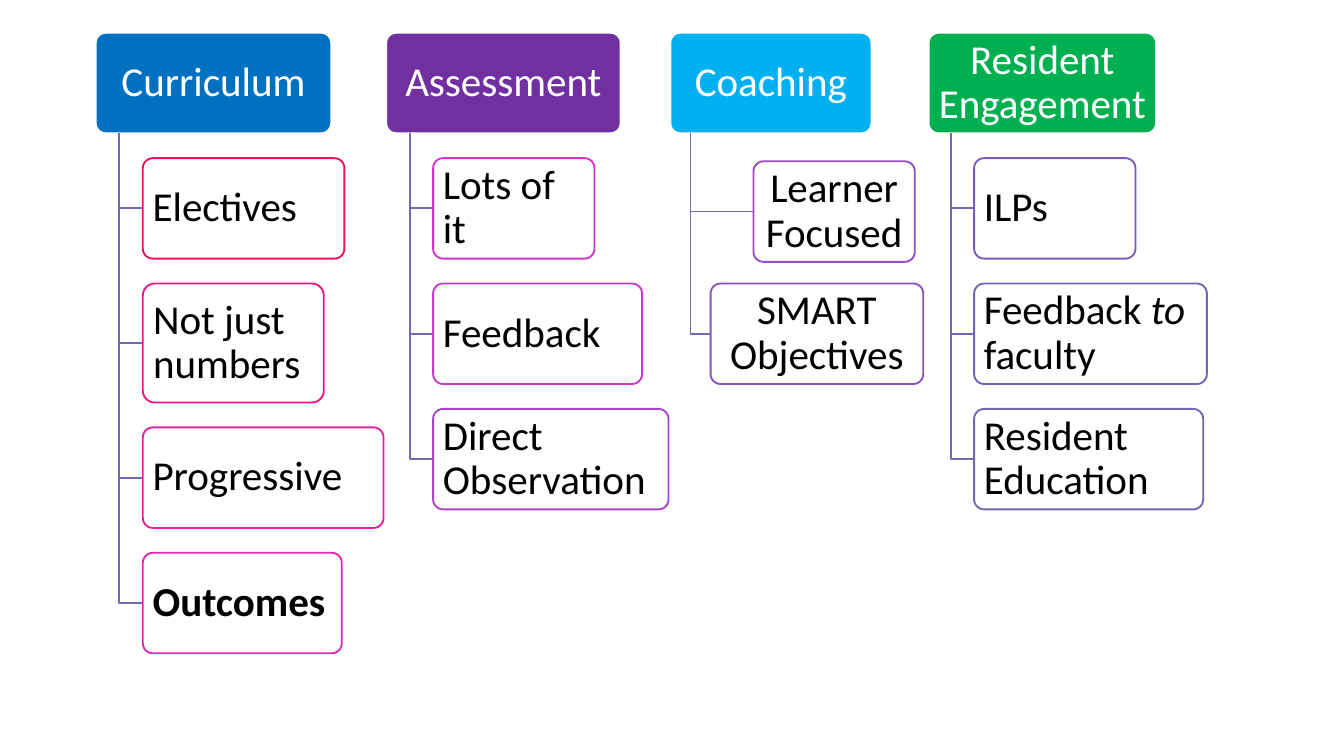
from dataclasses import dataclass

from lxml import etree
from pptx import Presentation
from pptx.dml.color import RGBColor
from pptx.enum.shapes import MSO_SHAPE
from pptx.enum.text import MSO_ANCHOR, PP_ALIGN
from pptx.oxml.ns import qn
from pptx.util import Cm, Pt

ROUNDED = MSO_SHAPE.ROUNDED_RECTANGLE
MIDDLE = MSO_ANCHOR.MIDDLE
LEFT, CENTER = PP_ALIGN.LEFT, PP_ALIGN.CENTER
BLANK_LAYOUT = 6


@dataclass(frozen=True)
class Theme:
    font: str = "Calibri"
    size: int = 22
    line_width: int = 1
    white: str = "FFFFFF"
    black: str = "000000"
    branch: str = "6F69AF"
    card_opacity: int = 90


@dataclass(frozen=True)
class Item:
    spans: tuple  # (text, style) pairs; style is "", "bold" or "italic"
    width: float
    outline: str
    height: float = 1.9
    align: PP_ALIGN = LEFT
    shift_x: float = 0
    shift_y: float = 0


@dataclass(frozen=True)
class Topic:
    title: str
    left: float
    width: float
    fill: str
    items: tuple


THEME = Theme()

# Vertical rhythm in centimetres
HEADER_TOP = 0.62
HEADER_HEIGHT = 1.9
GAP = 0.47

TOPICS = (
    Topic("Curriculum", 1.81, 4.45, "0070C0", (
        Item((("Electives", ""),), 3.81, "ED1163"),
        Item((("Not just numbers", ""),), 3.42, "E81983", height=2.25),
        Item((("Progressive", ""),), 4.55, "E1219F"),
        Item((("Outcomes", "bold"),), 3.76, "DB2AB7"),
    )),
    Topic("Assessment", 7.3, 4.43, "7030A0", (
        Item((("Lots of it", ""),), 3.05, "D532CA"),
        Item((("Feedback", ""),), 3.95, "C53ACF"),
        Item((("Direct Observation", ""),), 4.45, "AD42CA"),
    )),
    Topic("Coaching", 12.67, 3.8, "00B0F0", (
        Item((("Learner Focused", ""),), 3.05, "994AC4", align=CENTER,
             shift_x=0.81, shift_y=0.06),
        Item((("SMART Objectives", ""),), 4.02, "8952BF", align=CENTER),
    )),
    Topic("Resident Engagement", 17.55, 4.3, "00B050", (
        Item((("ILPs", ""),), 3.05, "7D5AB9"),
        Item((("Feedback ", ""), ("to", "italic"), (" faculty", "")), 4.4, "7462B4"),
        Item((("Resident Education", ""),), 4.33, "6F69AF"),
    )),
)


def rgb(value):
    return RGBColor.from_string(value)


def set_outline(shape, color):
    shape.line.color.rgb = rgb(color)
    shape.line.width = Pt(THEME.line_width)
    shape.shadow.inherit = False


def set_opacity(shape, percent):
    color = shape.fill._xPr.find(qn("a:solidFill"))[0]
    etree.SubElement(color, qn("a:alpha"), val=str(percent * 1000))


def write_text(box, spans, color, align):
    frame = box.text_frame
    frame.word_wrap = True
    frame.vertical_anchor = MIDDLE
    frame.margin_left = frame.margin_right = Cm(0.13)
    frame.margin_top = frame.margin_bottom = Cm(0.08)
    para = frame.paragraphs[0]
    para.alignment = align
    para.line_spacing = 0.9
    for text, style in spans:
        span = para.add_run()
        span.text = text
        span.font.name = THEME.font
        span.font.size = Pt(THEME.size)
        span.font.color.rgb = rgb(color)
        span.font.bold = style == "bold"
        span.font.italic = style == "italic"


def add_box(page, left, top, width, height, fill, outline):
    box = page.shapes.add_shape(ROUNDED, Cm(left), Cm(top), Cm(width), Cm(height))
    box.adjustments[0] = 0.1
    box.fill.solid()
    box.fill.fore_color.rgb = rgb(fill)
    set_outline(box, outline)
    return box


def add_branch(page, trunk, top, end_x, end_y):
    """Draw an elbow down the trunk and across to an item."""
    builder = page.shapes.build_freeform(Cm(trunk), Cm(top))
    builder.add_line_segments(
        [(Cm(trunk), Cm(end_y)), (Cm(end_x), Cm(end_y))], close=False)
    branch = builder.convert_to_shape()
    branch.fill.background()
    set_outline(branch, THEME.branch)


def add_topic(page, topic):
    # Header
    header = add_box(page, topic.left, HEADER_TOP, topic.width, HEADER_HEIGHT,
                     topic.fill, THEME.white)
    write_text(header, [(topic.title, "")], THEME.white, CENTER)

    # Items hang from a trunk at a tenth of the header's width
    bottom = HEADER_TOP + HEADER_HEIGHT
    trunk = topic.left + topic.width / 10
    item_left = topic.left + topic.width / 5
    top = bottom + GAP
    for item in topic.items:
        x, y = item_left + item.shift_x, top + item.shift_y
        add_branch(page, trunk, bottom, x, y + item.height / 2)
        card = add_box(page, x, y, item.width, item.height,
                       THEME.white, item.outline)
        set_opacity(card, THEME.card_opacity)
        write_text(card, item.spans, THEME.black, item.align)
        top += item.height + GAP


def main():
    deck = Presentation()
    deck.slide_width, deck.slide_height = Cm(25.4), Cm(14.29)
    page = deck.slides.add_slide(deck.slide_layouts[BLANK_LAYOUT])
    for topic in TOPICS:
        add_topic(page, topic)
    deck.save("out.pptx")


if __name__ == "__main__":
    main()
